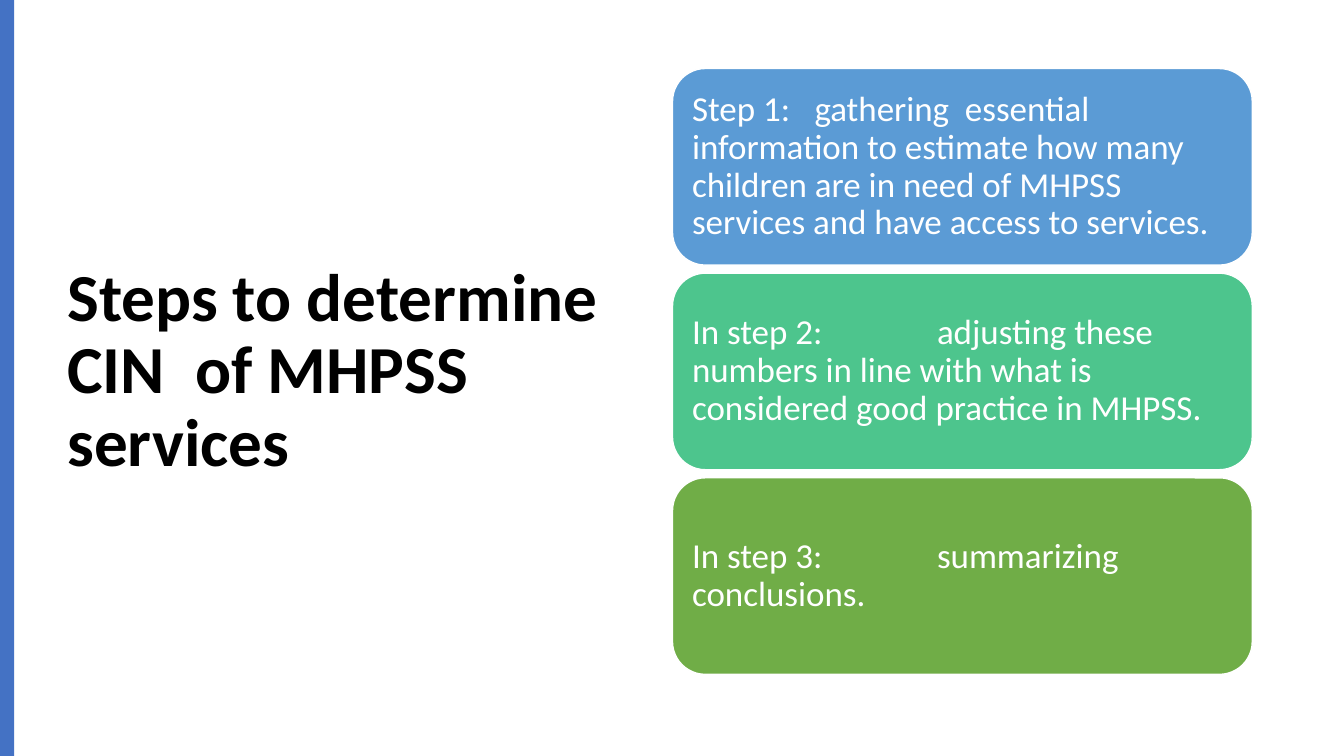
from pptx import Presentation
from pptx.dml.color import RGBColor
from pptx.enum.shapes import MSO_SHAPE
from pptx.enum.text import MSO_ANCHOR, PP_ALIGN
from pptx.util import Inches, Pt

COLORS = {
    "accent": "4472C4",
    "title": "000000",
    "white": "FFFFFF",
    "blue": "5B9BD5",
    "teal": "4DC58D",
    "green": "70AD47",
}

STEPS = [
    ("Step 1: \tgathering  essential information to estimate how many "
     "children are in need of MHPSS services and have access to services.", "blue"),
    ("In step 2: \tadjusting these numbers in line with what is "
     "considered good practice in MHPSS.", "teal"),
    ("In step 3: \tsummarizing conclusions.", "green"),
]


def rgb(name):
    """Return the named colour."""
    return RGBColor.from_string(COLORS[name])


def write(frame, text, size, color, bold=False):
    """Put one left-aligned, vertically centred paragraph in a text frame."""
    frame.word_wrap = True
    frame.vertical_anchor = MSO_ANCHOR.MIDDLE
    paragraph = frame.paragraphs[0]
    paragraph.text = text
    paragraph.alignment = PP_ALIGN.LEFT
    paragraph.line_spacing = 0.9
    paragraph.font.name = "Calibri"
    paragraph.font.size = Pt(size)
    paragraph.font.bold = bold
    paragraph.font.color.rgb = rgb(color)
    return paragraph


def add_accent_bar(slide, left, top, width, height):
    """Draw the solid bar along the slide edge."""
    bar = slide.shapes.add_shape(
        MSO_SHAPE.RECTANGLE, Inches(left), Inches(top), Inches(width), Inches(height))
    bar.shadow.inherit = False
    bar.fill.solid()
    bar.fill.fore_color.rgb = rgb("accent")
    bar.line.fill.background()


def add_title(slide, left, top, width, height):
    """Place the slide title in its box."""
    title = slide.shapes.add_textbox(
        Inches(left), Inches(top), Inches(width), Inches(height))
    write(title.text_frame, "Steps to determine CIN  of MHPSS services",
          48, "title", bold=True)


def add_steps(slide, left, top, width, height, gap=0.08):
    """Stack the step cards evenly in the given box."""
    card_height = (height - gap * (len(STEPS) - 1)) / len(STEPS)
    for index, (text, color) in enumerate(STEPS):
        card = slide.shapes.add_shape(
            MSO_SHAPE.ROUNDED_RECTANGLE,
            Inches(left), Inches(top + index * (card_height + gap)),
            Inches(width), Inches(card_height))
        card.shadow.inherit = False
        card.fill.solid()
        card.fill.fore_color.rgb = rgb(color)
        card.line.color.rgb = rgb("white")
        card.line.width = Pt(1)
        frame = card.text_frame
        frame.margin_left = frame.margin_right = Inches(0.1)
        frame.margin_top = frame.margin_bottom = Inches(0.1)
        paragraph = write(frame, text, 25, "white")
        paragraph._p.get_or_add_pPr().set("defTabSz", str(Inches(1.215)))


def main():
    """Build and save the slide."""
    deck = Presentation()
    deck.slide_width = Inches(13.33)
    deck.slide_height = Inches(7.5)
    slide = deck.slides.add_slide(deck.slide_layouts[6])
    add_title(slide, 0.57, 0.68, 5.67, 6.02)
    add_accent_bar(slide, 0, 0, 0.14, 7.5)
    add_steps(slide, 6.67, 0.68, 5.75, 6.01)
    deck.save("out.pptx")


if __name__ == "__main__":
    main()
